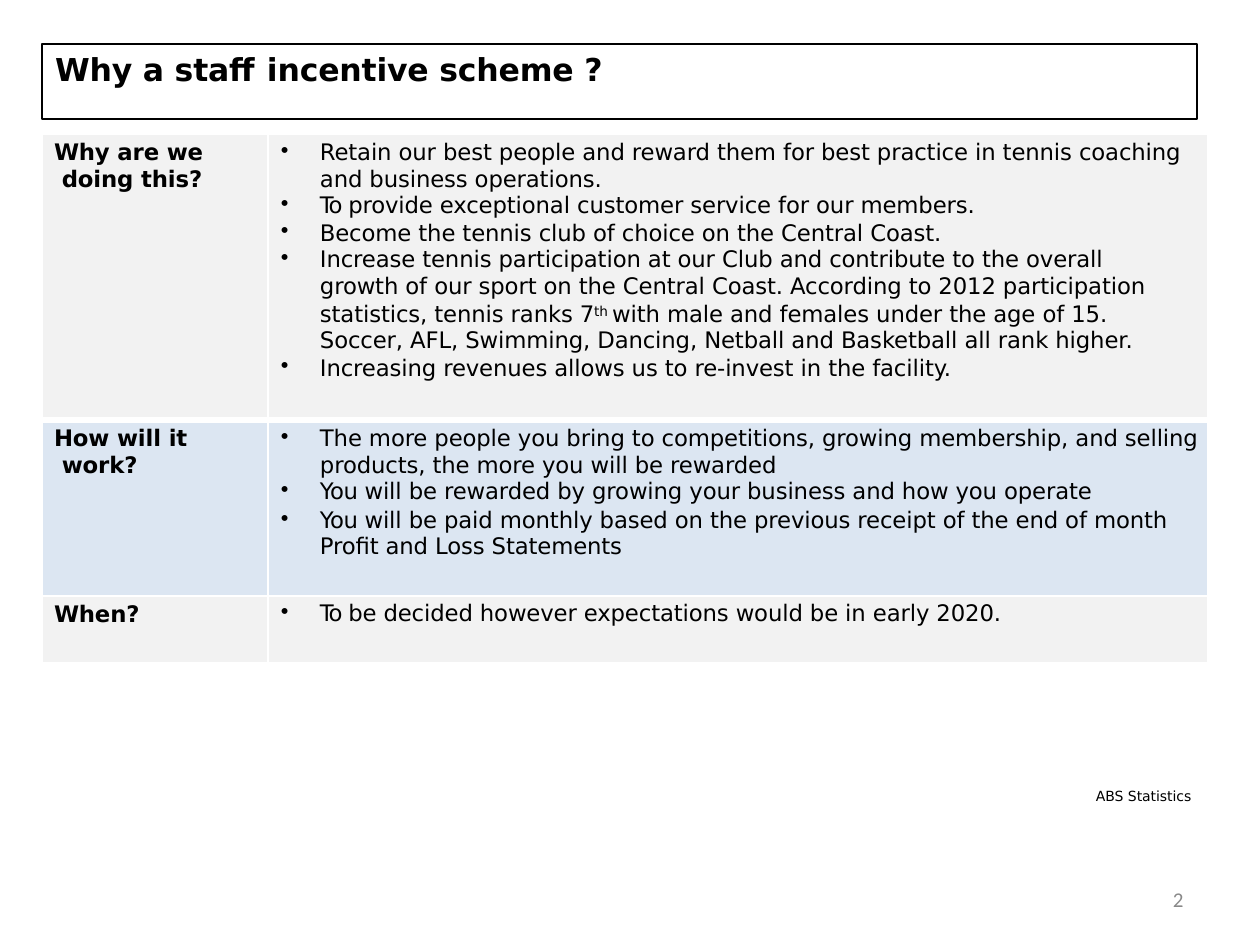
import pptx
import pptx.util
import pptx.dml.color
import pptx.enum.text
import pptx.oxml
import pptx.oxml.ns

Pt = pptx.util.Pt
PX = 914400 / 126
COLORS = {"ink": "000000", "grey": "F2F2F2", "blue": "DCE6F2",
          "rule": "FFFFFF", "number": "898989"}
FONT = "DejaVu Sans"
TIGHT = {"To ": -80, "You ": -30}  # letter spacing of opening words
INDENT, HANGING = 52, 39

# Each answer line: text, bulleted, line spacing, space before
TOPICS = [
    ("Why are we\v doing this?", "grey", 286, [
        ("Retain our best people and reward them for best practice in tennis "
         "coaching and business operations.", True, 1.03, 0),
        ("To provide exceptional customer service for our members.", True, Pt(14.9), 0),
        ("Become the tennis club of choice on the Central Coast.", True, Pt(15.2), 0.5),
        ("Increase tennis participation at our Club and contribute to the overall",
         True, Pt(15.2), 0),
        ("growth of our sport on the Central Coast. According to 2012 participation "
         "statistics, tennis ranks 7|th |with male and females under the age of 15.",
         False, 1.03, 0),
        ("Soccer, AFL, Swimming, Dancing, Netball and Basketball all rank higher.",
         False, Pt(14.9), 0),
        ("Increasing revenues allows us to re-invest in the facility.", True, 1.0, 0.5)]),
    ("How will it\v work?", "blue", 176, [
        ("The more people you bring to competitions, growing membership, and "
         "selling products, the more you will be rewarded", True, 1.03, 0),
        ("You will be rewarded by growing your business and how you operate",
         True, Pt(14.9), 0),
        ("You will be paid monthly based on the previous receipt of the end of month "
         "Profit and Loss Statements", True, Pt(14.9), 1.6)]),
    ("When?", "grey", 67, [
        ("To be decided however expectations would be in early 2020.", True, 1.0, 0)]),
]


def px(length):
    return round(length * PX)


def rgb(name):
    return pptx.dml.color.RGBColor.from_string(COLORS[name])


def style(span, size, bold=False, color="ink", font=FONT, spacing=-10):
    span.font.name, span.font.size, span.font.bold = font, Pt(size), bold
    span.font.color.rgb = rgb(color)
    span.font._element.set("spc", str(spacing))


def indent(para, left, hanging=0):
    props = para._p.get_or_add_pPr()
    props.set("marL", str(px(left)))
    props.set("indent", str(-px(hanging)))
    return props


def set_margins(frame, top):
    frame.margin_left = frame.margin_right = frame.margin_bottom = 0
    frame.margin_top = px(top)


def add_title(page, left, top, width, height):
    box = page.shapes.title
    box.left, box.top, box.width, box.height = map(px, (left, top, width, height))
    box.line.color.rgb = rgb("ink")
    box.line.width = Pt(1.5)
    frame = box.text_frame
    frame.text = "Why a staff incentive scheme ?"
    frame.vertical_anchor = pptx.enum.text.MSO_ANCHOR.TOP
    frame.auto_size = pptx.enum.text.MSO_AUTO_SIZE.NONE
    set_margins(frame, 6)
    para = frame.paragraphs[0]
    para.alignment = pptx.enum.text.PP_ALIGN.LEFT
    indent(para, 13)
    style(para.runs[0], 18, bold=True)


def set_borders(cell, top, bottom):
    props = cell._tc.get_or_add_tcPr()
    for side, width in (("L", 1.5), ("R", 1.5), ("T", top), ("B", bottom)):
        props.append(pptx.oxml.parse_xml(
            f'<a:ln{side} {pptx.oxml.ns.nsdecls("a")} w="{Pt(width)}"><a:solidFill>'
            f'<a:srgbClr val="{COLORS["rule"]}"/></a:solidFill></a:ln{side}>'))


def add_answer(para, text, bulleted, line_spacing, space_before):
    props = indent(para, INDENT, HANGING if bulleted else 0)
    bullet = '<a:buChar {} char="•"/>' if bulleted else "<a:buNone {}/>"
    props.append(pptx.oxml.parse_xml(bullet.format(pptx.oxml.ns.nsdecls("a"))))
    para.line_spacing, para.space_before = line_spacing, Pt(space_before)
    opening = next((word for word in TIGHT if text.startswith(word)), "")
    pieces = [opening] * bool(opening) + text[len(opening):].split("|")
    for piece in pieces:
        span = para.add_run()
        span.text = piece
        style(span, 13, spacing=TIGHT.get(piece, -6))
        if piece == "th ":
            span.font.size = Pt(13.5)
            span.font._element.set("baseline", "25000")


def add_topics(page, left, top, widths):
    heights = [topic[2] for topic in TOPICS]
    table = page.shapes.add_table(len(TOPICS), 2, px(left), px(top),
                                  px(sum(widths)), px(sum(heights))).table
    table.first_row = table.horz_banding = False
    for column, width in zip(table.columns, widths):
        column.width = px(width)
    for index, (question, fill, height, answers) in enumerate(TOPICS):
        table.rows[index].height = px(height)
        for cell in table.rows[index].cells:
            set_margins(cell, 5)
            set_borders(cell, 4.25 if index == 1 else 1.5, 4.25 if index == 0 else 1.5)
            cell.fill.solid()
            cell.fill.fore_color.rgb = rgb(fill)
        asked, answered = (cell.text_frame for cell in table.rows[index].cells)
        para = asked.paragraphs[0]
        para.text = question
        para.line_spacing = 1.03
        indent(para, 12)
        for span in para.runs:
            style(span, 13, bold=True, spacing=-6)
        for number, answer in enumerate(answers):
            para = answered.add_paragraph() if number else answered.paragraphs[0]
            add_answer(para, *answer)


def add_note(page, text, left, top, width, height, inset, **look):
    frame = page.shapes.add_textbox(*map(px, (left, top, width, height))).text_frame
    frame.word_wrap = True
    set_margins(frame, 1)
    frame.text = text
    indent(frame.paragraphs[0], inset)
    style(frame.paragraphs[0].runs[0], **look)


def main():
    deck = pptx.Presentation()
    deck.slide_width, deck.slide_height = px(1260), px(945)
    page = deck.slides.add_slide(deck.slide_layouts[5])
    add_title(page, 42, 44, 1155, 75)
    add_topics(page, 42, 134, (226, 940))
    add_note(page, "ABS Statistics", 1095, 787, 101, 20, 1, size=8, spacing=-5)
    add_note(page, "2", 1168, 886, 22, 29, 5, size=12, color="number",
             font="Calibri", spacing=0)
    deck.save("out.pptx")


if __name__ == "__main__":
    main()
